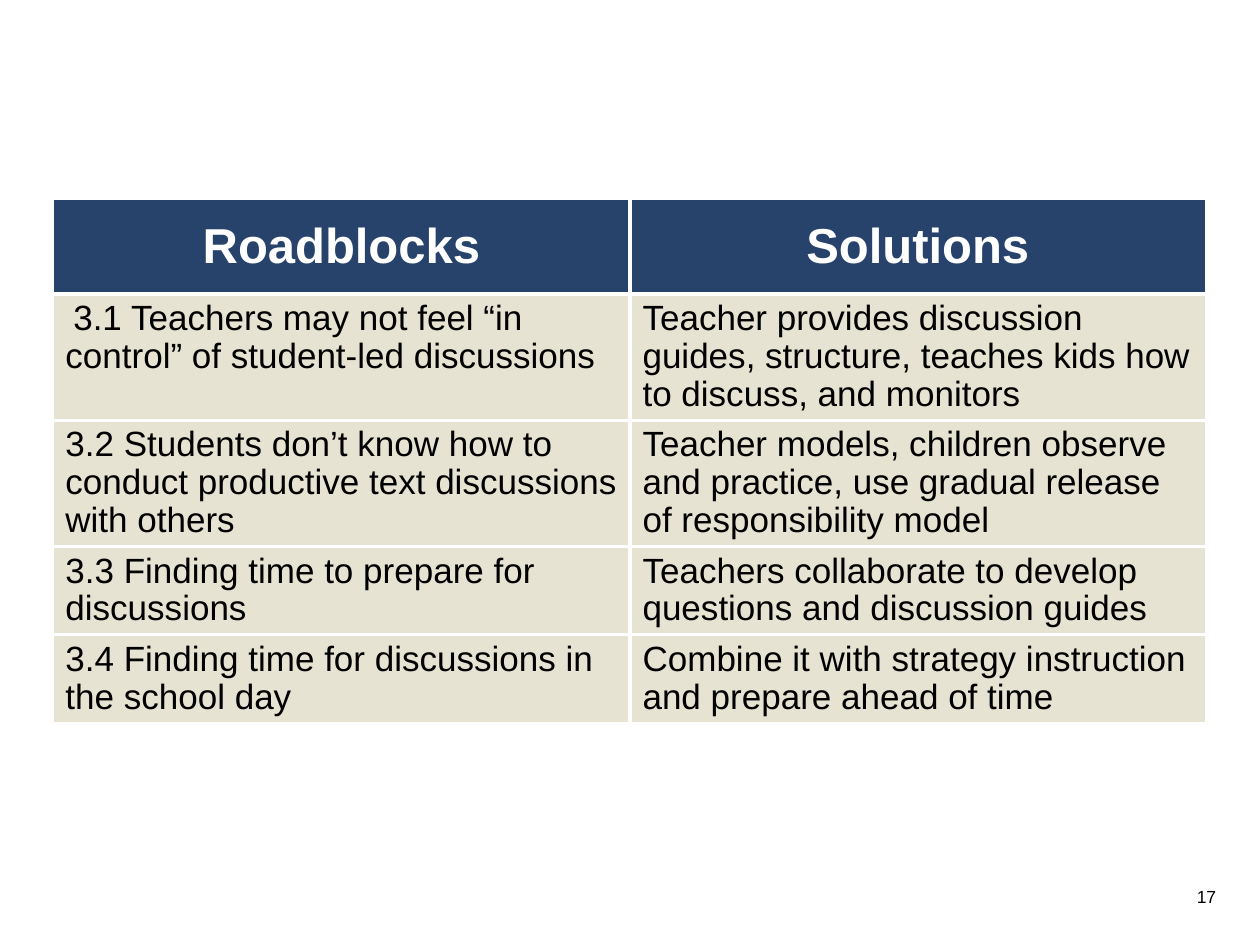
import pptx
import pptx.dml.color
import pptx.enum.text
import pptx.oxml
import pptx.oxml.ns
import pptx.util
from dataclasses import dataclass

Pt = pptx.util.Pt
Align = pptx.enum.text.PP_ALIGN
Anchor = pptx.enum.text.MSO_ANCHOR


@dataclass
class Theme:
    font: str = "Arial"
    navy: str = "27436C"
    sand: str = "E6E3D2"
    white: str = "FFFFFF"
    black: str = "000000"
    head: int = 28
    body: int = 20
    small: int = 10
    rule: float = 2.25


theme = Theme()

ROWS = [
    ("Roadblocks", "Solutions"),
    ("3.1 Teachers may not feel “in control” of student-led discussions",
     "Teacher provides discussion guides, structure, teaches kids how to discuss, and monitors"),
    ("3.2 Students don’t know how to conduct productive text discussions with others",
     "Teacher models, children observe and practice, use gradual release of responsibility model"),
    ("3.3 Finding time to prepare for discussions",
     "Teachers collaborate to develop questions and discussion guides"),
    ("3.4 Finding time for discussions in the school day",
     "Combine it with strategy instruction and prepare ahead of time"),
]
HEIGHTS = [54, 62, 62, 43.2, 43.2]
WIDTHS = [329.8, 329]


def rgb(code):
    return pptx.dml.color.RGBColor.from_string(code)


def style(para, size, color, bold=False):
    for run in para.runs:
        font = run.font
        font.name, font.size, font.bold = theme.font, Pt(size), bold
        font.color.rgb = rgb(color)


def border(cell, sides):
    # Border lines come before the fill in the cell properties
    props = cell._tc.get_or_add_tcPr()
    for spot, side in enumerate(sides):
        props.insert(spot, pptx.oxml.parse_xml(
            f'<a:ln{side} {pptx.oxml.ns.nsdecls("a")} w="{Pt(theme.rule)}">'
            f'<a:solidFill><a:srgbClr val="{theme.white}"/></a:solidFill></a:ln{side}>'))


def fill_cell(cell, text, head):
    cell.fill.solid()
    cell.fill.fore_color.rgb = rgb(theme.navy if head else theme.sand)
    cell.text_frame.text = text
    para = cell.text_frame.paragraphs[0]
    if head:
        cell.vertical_anchor = Anchor.MIDDLE
        para.alignment = Align.CENTER
        style(para, theme.head, theme.white, True)
    else:
        para.line_spacing = 0.97
        style(para, theme.body, theme.black)


def add_grid(slide, left, top, width, height):
    frame = slide.shapes.add_table(len(ROWS), len(WIDTHS), Pt(left), Pt(top),
                                   Pt(width), Pt(height))
    table = frame.table
    for col, size in zip(table.columns, WIDTHS):
        col.width = Pt(size)
    for row, size in zip(table.rows, HEIGHTS):
        row.height = Pt(size)
    frame.height = Pt(height)
    last = len(ROWS) - 1
    for i, texts in enumerate(ROWS):
        for j, text in enumerate(texts):
            cell = table.cell(i, j)
            fill_cell(cell, text, i == 0)
            # Rules run between cells only, in schema order L, R, T, B
            inner = {"L": j > 0, "R": j == 0, "T": i > 0, "B": i < last}
            border(cell, [side for side, shown in inner.items() if shown])
    # The first roadblock has a small first-line indent
    first = table.cell(1, 0).text_frame.paragraphs[0]
    first._p.get_or_add_pPr().set("indent", str(Pt(4.5)))


def add_number(slide, left, top, width, height):
    box = slide.shapes.add_textbox(Pt(left), Pt(top), Pt(width), Pt(height))
    frame = box.text_frame
    frame.word_wrap = True
    frame.auto_size = pptx.enum.text.MSO_AUTO_SIZE.SHAPE_TO_FIT_TEXT
    frame.text = "17"
    para = frame.paragraphs[0]
    para.alignment = Align.RIGHT
    style(para, theme.small, theme.black)


def main():
    deck = pptx.Presentation()
    deck.slide_width, deck.slide_height = Pt(720), Pt(540)
    slide = deck.slides.add_slide(deck.slide_layouts[6])
    add_grid(slide, 30.2, 114, 658.8, 322.6)
    add_number(slide, 671.8, 502.6, 30.2, 19.4)
    deck.save("out.pptx")


if __name__ == "__main__":
    main()
